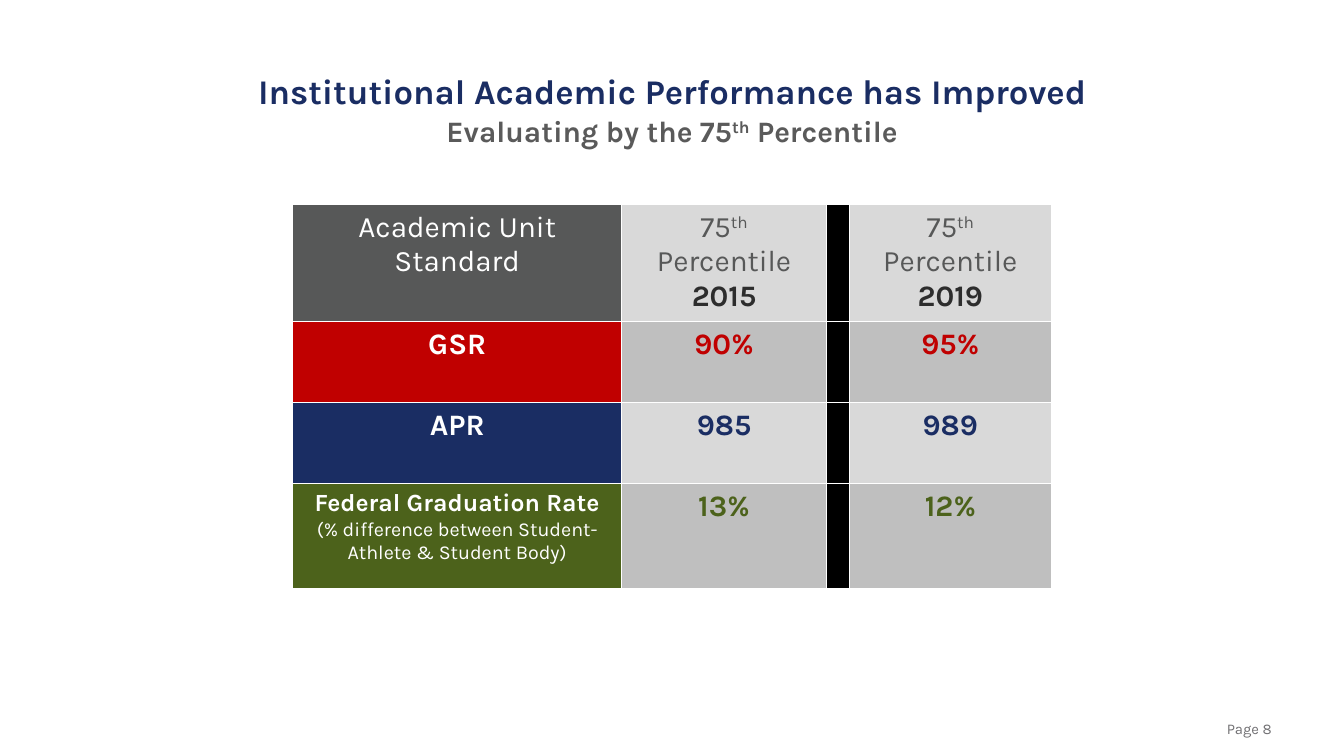
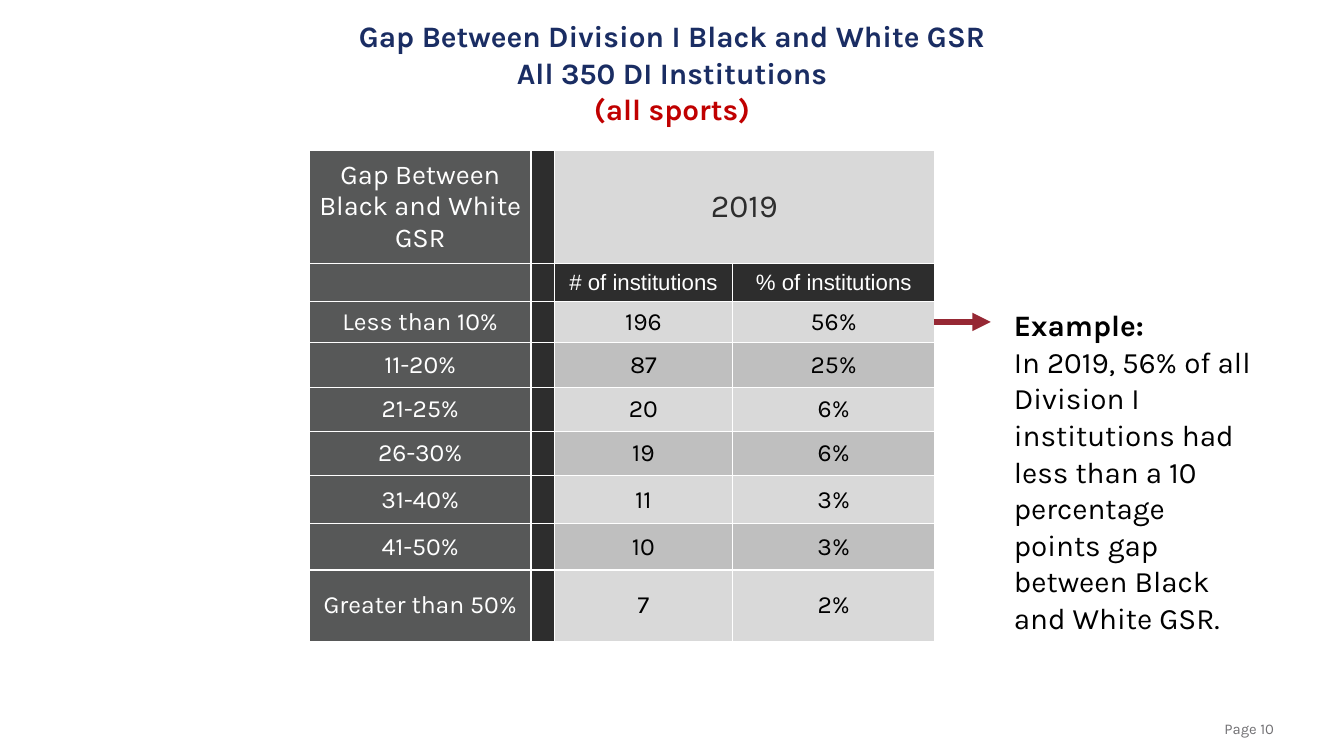
from lxml import etree
from pptx import Presentation
from pptx.dml.color import RGBColor
from pptx.enum.shapes import MSO_CONNECTOR as Connector
from pptx.enum.text import MSO_ANCHOR as Anchor, PP_ALIGN as Align
from pptx.oxml.ns import qn
from pptx.util import Inches, Pt

WIDTH, HEIGHT = 15.11, 8.5
FONT, PLAIN_FONT = "Karla", "Arial"
NAVY, RED, GREEN, MAROON = "1A2D63", "C00000", "4C621B", "962834"
WHITE, BLACK, INK, SLATE, GRAY = "FFFFFF", "000000", "2D2D2D", "575858", "5A5A5A"
FOOTER_GRAY = "717073"
BANDS = ("D9D9D9", "BFBFBF")
CELL_INSETS = (0.11, 0.06)

# Content: a line is (text, size, colour, bold); ^...^ marks superscript
PERFORMANCE_TITLE = [
    ("Institutional Academic Performance has Improved", 28, NAVY, True),
    ("Evaluating by the 75^th^ Percentile", 24, GRAY, True),
]
PERFORMANCE_YEARS = ("2015", "2019")
PERFORMANCE = [
    (RED, [("GSR", 24, WHITE, True)], "90%", "95%"),
    (NAVY, [("APR", 24, WHITE, True)], "985", "989"),
    (GREEN, [("Federal Graduation Rate", 20, WHITE, True),
             ("(% difference between Student-Athlete & Student Body)", 16, WHITE, False)],
     "13%", "12%"),
]
GAP_TITLE = [
    ("Gap Between Division I Black and White GSR", 24, NAVY, True),
    ("All 350 DI Institutions", 24, NAVY, True),
    ("(all sports)", 24, RED, True),
]
GAPS = [
    ("Less than 10%", "196", "56%"),
    ("11-20%", "87", "25%"),
    ("21-25%", "20", "6%"),
    ("26-30%", "19", "6%"),
    ("31-40%", "11", "3%"),
    ("41-50%", "10", "3%"),
    ("Greater than 50%", "7", "2%"),
]
EXAMPLE = [
    ("Example:", 24, BLACK, True),
    ("In 2019, 56% of all Division I institutions had less than a 10 percentage "
     "points gap between Black and White GSR.", 24, BLACK, False),
]


def rgb(value):
    return RGBColor.from_string(value)


def write(frame, lines, align=Align.CENTER, font=FONT, spacing=None):
    frame.word_wrap = True
    for i, (text, size, color, bold) in enumerate(lines):
        para = frame.paragraphs[0] if i == 0 else frame.add_paragraph()
        para.alignment = align
        if spacing:
            para.line_spacing = spacing
        para.font.name, para.font.size, para.font.bold = font, Pt(size), bold
        para.font.color.rgb = rgb(color)
        for part, piece in enumerate(text.split("^")):
            span = para.add_run()
            span.text = piece
            if part % 2:
                span._r.get_or_add_rPr().set("baseline", "30000")


def add_text(page, left, top, width, height, lines, anchor=Anchor.TOP, **style):
    box = page.shapes.add_textbox(*map(Inches, (left, top, width, height)))
    write(box.text_frame, lines, **style)
    box.text_frame.vertical_anchor = anchor


def add_page(deck, number, title, top, height):
    """Blank page with the shared centred title and page number."""
    page = deck.slides.add_slide(deck.slide_layouts[6])
    add_text(page, 13.36, 8.04, 1.37, 0.29, [(f"Page {number}", 12, FOOTER_GRAY, False)])
    add_text(page, 0.92, top, WIDTH - 2 * 0.92, height, title, Anchor.MIDDLE, spacing=1.03)
    return page


def add_grid(page, left, top, columns, rows):
    frame = page.shapes.add_table(len(rows), len(columns), Inches(left), Inches(top),
                                  Inches(sum(columns)), Inches(sum(rows)))
    for column, width in zip(frame.table.columns, columns):
        column.width = Inches(width)
    for row, height in zip(frame.table.rows, rows):
        row.height = Inches(height)
    return frame.table


def fill_cell(cell, fill, lines=(), anchor=Anchor.TOP, font=FONT):
    cell.margin_left = cell.margin_right = Inches(CELL_INSETS[0])
    cell.margin_top = cell.margin_bottom = Inches(CELL_INSETS[1])
    cell.vertical_anchor = anchor
    write(cell.text_frame, lines, font=font)
    # White hairlines go before the fill in the cell properties
    props = cell._tc.get_or_add_tcPr()
    for side in ("lnL", "lnR", "lnT", "lnB"):
        line = etree.SubElement(props, qn(f"a:{side}"), w=str(Pt(1)))
        solid = etree.SubElement(line, qn("a:solidFill"))
        etree.SubElement(solid, qn("a:srgbClr"), val=WHITE)
    cell.fill.solid()
    cell.fill.fore_color.rgb = rgb(fill)


def add_arrow(page, start, end, y):
    arrow = page.shapes.add_connector(Connector.STRAIGHT, *map(Inches, (start, y, end, y)))
    arrow.line.width = Pt(5)
    arrow.line.color.rgb = rgb(MAROON)
    etree.SubElement(arrow.line._get_or_add_ln(), qn("a:tailEnd"), type="triangle")
    etree.SubElement(arrow._element.spPr, qn("a:effectLst"))


def performance_page(deck):
    page = add_page(deck, 8, PERFORMANCE_TITLE, 0.54, 1.36)
    grid = add_grid(page, 3.29, 2.3, (3.7, 2.3, 0.25, 2.27), (1.31, 0.91, 0.91, 1.18))
    # Header row
    fill_cell(grid.cell(0, 0), SLATE, [("Academic Unit Standard", 24, WHITE, False)])
    for column, year in zip((1, 3), PERFORMANCE_YEARS):
        fill_cell(grid.cell(0, column), BANDS[0],
                  [("75^th^ Percentile", 24, SLATE, False), (year, 24, INK, True)])
    # One colour per standard
    for r, (color, label, *values) in enumerate(PERFORMANCE, 1):
        fill_cell(grid.cell(r, 0), color, label)
        for column, value in zip((1, 3), values):
            fill_cell(grid.cell(r, column), BANDS[r % 2], [(value, 24, color, True)])
    for r in range(len(grid.rows)):
        fill_cell(grid.cell(r, 2), BLACK)


def gap_page(deck):
    page = add_page(deck, 10, GAP_TITLE, 0.16, 1.29)
    left, top, columns = 3.48, 1.69, (2.49, 0.25, 2.01, 2.27)
    rows = (1.27, 0.43, 0.46, 0.51, 0.49, 0.5, 0.54, 0.52, 0.8)
    grid = add_grid(page, left, top, columns, rows)
    # Two header rows
    grid.cell(0, 2).merge(grid.cell(0, 3))
    fill_cell(grid.cell(0, 0), SLATE,
              [("Gap Between Black and White GSR", 22, WHITE, False)], Anchor.MIDDLE)
    fill_cell(grid.cell(0, 2), BANDS[0], [("2019", 26, INK, False)], Anchor.MIDDLE)
    fill_cell(grid.cell(1, 0), SLATE)
    for column, sign in zip((2, 3), "#%"):
        fill_cell(grid.cell(1, column), INK, [(f"{sign} of institutions", 18, WHITE, False)],
                  Anchor.MIDDLE, PLAIN_FONT)
    # One row per gap range
    for r, (label, *values) in enumerate(GAPS, 2):
        fill_cell(grid.cell(r, 0), SLATE, [(label, 20, WHITE, False)], Anchor.MIDDLE)
        for column, value in zip((2, 3), values):
            fill_cell(grid.cell(r, column), BANDS[r % 2], [(value, 20, BLACK, False)],
                      Anchor.MIDDLE)
    for r in range(len(rows)):
        fill_cell(grid.cell(r, 1), INK)
    # Example beside the first range
    right = left + sum(columns)
    add_text(page, 11.3, 3.39, 2.9, 3.74, EXAMPLE, align=Align.LEFT, spacing=1.03)
    add_arrow(page, right, right + 0.64, top + sum(rows[:2]) + rows[2] / 2)


def main():
    deck = Presentation()
    deck.slide_width, deck.slide_height = Inches(WIDTH), Inches(HEIGHT)
    performance_page(deck)
    gap_page(deck)
    deck.save("out.pptx")


if __name__ == "__main__":
    main()
